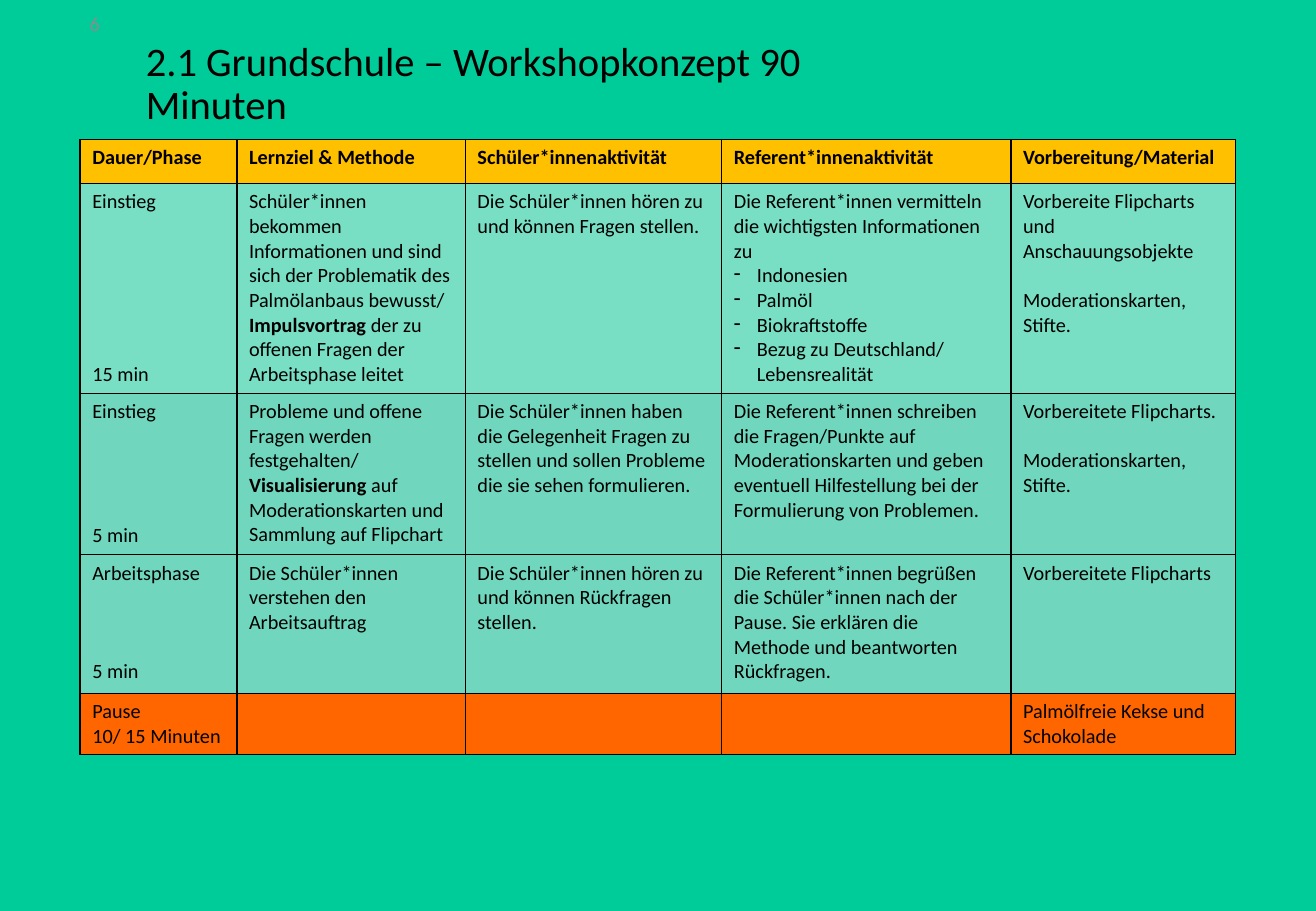
from dataclasses import dataclass

from lxml import etree
from pptx import Presentation, util as u
from pptx.dml.color import RGBColor
from pptx.enum import text
from pptx.oxml import ns

TITLE = "2.1 Grundschule – Workshopkonzept 90 Minuten"
NUMBER = "6"
COLS = [1.29, 1.88, 2.11, 2.38, 1.85]
ROWS = [0.36, 1.72, 1.33, 1.14, 0.5]
ORIGIN = (0.66, 1.15)
TITLE_BOX = (1.1, 0.36, 6.78, 0.68)
NUMBER_BOX = (-0.44, -0.01, 2.44, 0.4)
BULLET = "- "
BOLD = "|"

# fmt: off
PLAN = [
    ("header", [["Dauer/Phase"], ["Lernziel & Methode"], ["Schüler*innenaktivität"],
                ["Referent*innenaktivität"], ["Vorbereitung/Material"]]),
    ("light", [
        ["Einstieg", 6, "15 min"],
        ["Schüler*innen bekommen Informationen und sind sich der Problematik des "
         "Palmölanbaus bewusst/ |Impulsvortrag| der zu offenen Fragen der Arbeitsphase leitet"],
        ["Die Schüler*innen hören zu und können Fragen stellen."],
        ["Die Referent*innen vermitteln die wichtigsten Informationen zu",
         "- Indonesien", "- Palmöl", "- Biokraftstoffe",
         "- Bezug zu Deutschland/ Lebensrealität"],
        ["Vorbereite Flipcharts und Anschauungsobjekte", 1, "Moderationskarten, Stifte."],
    ]),
    ("shade", [
        ["Einstieg", 4, "5 min"],
        ["Probleme und offene Fragen werden festgehalten/ |Visualisierung| auf "
         "Moderationskarten und Sammlung auf Flipchart"],
        ["Die Schüler*innen haben die Gelegenheit Fragen zu stellen und sollen Probleme "
         "die sie sehen formulieren."],
        ["Die Referent*innen schreiben die Fragen/Punkte auf Moderationskarten und geben "
         "eventuell Hilfestellung bei der Formulierung von Problemen."],
        ["Vorbereitete Flipcharts.", 1, "Moderationskarten, Stifte."],
    ]),
    ("shade", [
        ["Arbeitsphase", 3, "5 min"],
        ["Die Schüler*innen verstehen den Arbeitsauftrag"],
        ["Die Schüler*innen hören zu und können Rückfragen stellen."],
        ["Die Referent*innen begrüßen die Schüler*innen nach der Pause. Sie erklären die "
         "Methode und beantworten Rückfragen."],
        ["Vorbereitete Flipcharts"],
    ]),
    ("pause", [["Pause", "10/ 15 Minuten"], [], [], [],
               ["Palmölfreie Kekse und Schokolade"]]),
]
# fmt: on


@dataclass(frozen=True)
class Theme:
    font: str = "Calibri"
    ink: str = "000000"
    muted: str = "8C8C8C"
    back: str = "00CC99"
    header: str = "FFC000"
    light: str = "F0F0F0"
    shade: str = "E1E1E1"
    pause: str = "FF6600"
    title: int = 24
    body: int = 12
    line: float = 14.65
    border: int = 1


THEME = Theme()
CLEAR = ("light", "shade")


def add_run(p, words, size=THEME.body, color=THEME.ink, bold=False):
    r = p.add_run()
    r.text = words
    for key, value in {"name": THEME.font, "size": u.Pt(size), "bold": bold}.items():
        setattr(r.font, key, value)
    r.font.color.rgb = RGBColor.from_string(color)


def add_bullet(p):
    props = p._p.get_or_add_pPr()
    indent = u.Inches(0.19)
    props.set("marL", str(indent))
    props.set("indent", str(-indent))
    etree.SubElement(props, ns.qn("a:buChar")).set("char", BULLET.strip())


def fill_text(tf, items, bold):
    gap, first = 0, True
    for item in items:
        if isinstance(item, int):
            gap = item
            continue
        p = tf.paragraphs[0] if first else tf.add_paragraph()
        first = False
        if gap:
            p.space_before = u.Pt(gap * THEME.line)
            gap = 0
        if item.startswith(BULLET):
            add_bullet(p)
            item = item.removeprefix(BULLET)
        for i, words in enumerate(item.split(BOLD)):
            add_run(p, words, bold=bold or i % 2 == 1)


def paint_cell(cell, kind):
    cell.fill.solid()
    cell.fill.fore_color.rgb = RGBColor.from_string(getattr(THEME, kind))
    props = cell._tc.get_or_add_tcPr()
    if kind in CLEAR:
        color = props.find(".//" + ns.qn("a:srgbClr"))
        etree.SubElement(color, ns.qn("a:alpha")).set("val", "50000")
    for i, side in enumerate("LRTB"):
        line = etree.Element(ns.qn("a:ln" + side), w=str(u.Pt(THEME.border)))
        solid = etree.SubElement(line, ns.qn("a:solidFill"))
        etree.SubElement(solid, ns.qn("a:srgbClr")).set("val", THEME.ink)
        props.insert(i, line)


def add_plan(s):
    box = [u.Inches(v) for v in (*ORIGIN, sum(COLS), sum(ROWS))]
    table = s.shapes.add_table(len(ROWS), len(COLS), *box).table
    for column, width in zip(table.columns, COLS):
        column.width = u.Inches(width)
    for row, height, (kind, cells) in zip(table.rows, ROWS, PLAN):
        row.height = u.Inches(height)
        for cell, items in zip(row.cells, cells):
            paint_cell(cell, kind)
            fill_text(cell.text_frame, items, kind == "header")


def set_label(sp, box, words, size, color, align, spacing):
    for key, value in zip(("left", "top", "width", "height"), box):
        setattr(sp, key, u.Inches(value))
    tf = sp.text_frame
    frame = {
        "word_wrap": True,
        "auto_size": text.MSO_AUTO_SIZE.NONE,
        "vertical_anchor": text.MSO_ANCHOR.MIDDLE,
    }
    for key, value in frame.items():
        setattr(tf, key, value)
    p = tf.paragraphs[0]
    p.alignment, p.line_spacing = align, spacing
    add_run(p, words, size, color)


def main():
    prs = Presentation()
    prs.slide_width, prs.slide_height = u.Inches(10.83), u.Inches(7.5)
    s = prs.slides.add_slide(prs.slide_layouts[5])
    s.background.fill.solid()
    s.background.fill.fore_color.rgb = RGBColor.from_string(THEME.back)
    add_plan(s)
    number = s.shapes.add_textbox(0, 0, 0, 0)
    align = text.PP_ALIGN
    set_label(number, NUMBER_BOX, NUMBER, THEME.body, THEME.muted, align.CENTER, 1.0)
    set_label(s.shapes.title, TITLE_BOX, TITLE, THEME.title, THEME.ink, align.LEFT, 0.9)
    prs.save("out.pptx")


if __name__ == "__main__":
    main()
